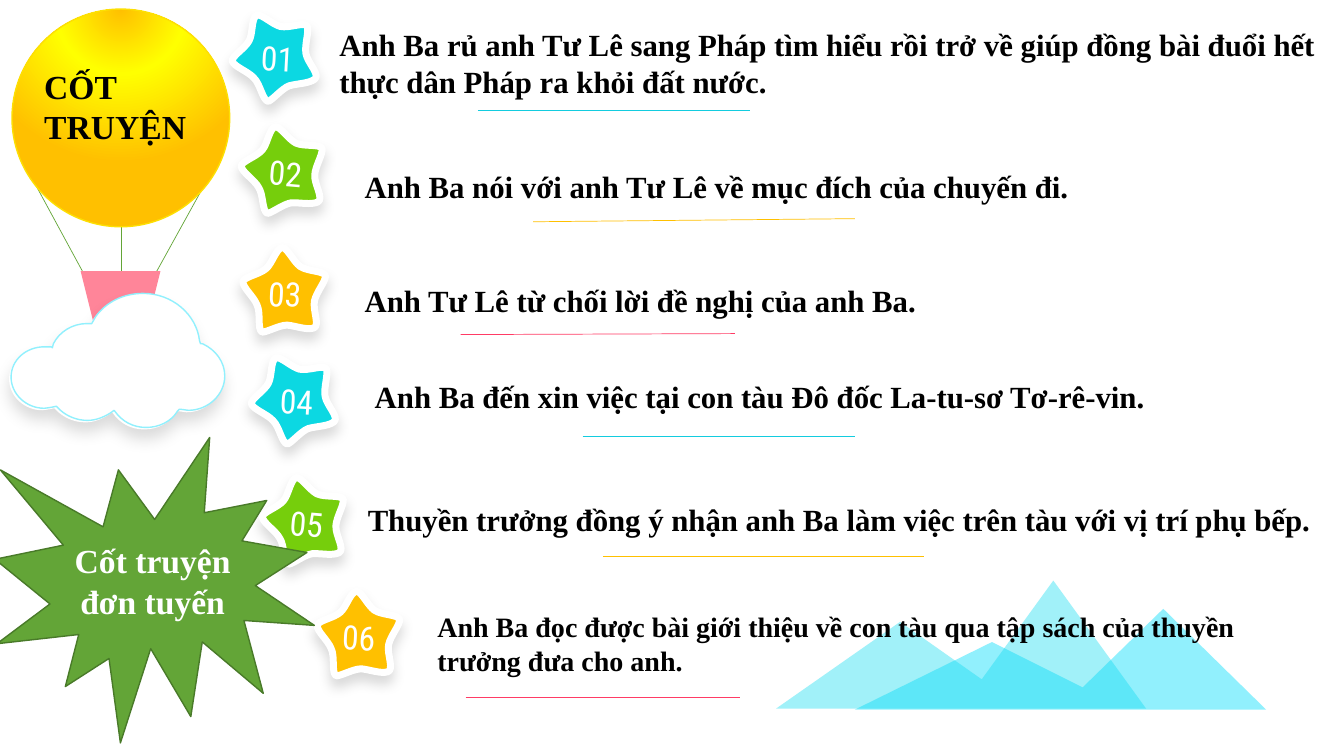
import pptx
import pptx.util
import pptx.oxml
import pptx.oxml.ns
import pptx.dml.color
import pptx.enum.shapes
import pptx.enum.text
import lxml.etree

Pt = pptx.util.Pt
RGB = pptx.dml.color.RGBColor.from_string
SHAPE = pptx.enum.shapes.MSO_SHAPE
ALIGN = pptx.enum.text.PP_ALIGN
ANCHOR = pptx.enum.text.MSO_ANCHOR
qn = pptx.oxml.ns.qn
NS = 'xmlns:a="http://schemas.openxmlformats.org/drawingml/2006/main"'

C = {"cyan": "0CD8E2", "lime": "76CE0C", "gold": "FFC000", "teal": "13CCDF",
     "rose": "FF3B65", "pink": "FF8599", "ice": "91F0FD", "water": "0DDBF1",
     "green": "63A537", "moss": "497A29", "rim": "FDDF03", "yellow": "FFFF00",
     "white": "FFFFFF", "black": "000000"}

HEAD = {"size": Pt(24), "name": "Times New Roman", "bold": True}
BODY = {**HEAD, "size": Pt(22)}
SMALL = {**HEAD, "size": Pt(20)}
DIGIT = {"size": Pt(24), "name": "Roboto Condensed", "bold": False}

# Outlines: a pair is a straight step, six numbers are a curve; unit 0.72 pt
UNIT = Pt(0.72)
STAR = [(82, 28), (80, 23, 65, 24, 57, 19), (50, 14, 44, 0, 39, 0),
        (33, 1, 29, 16, 23, 21), (16, 27, 1, 29, 0, 34),
        (0, 40, 11, 49, 14, 57), (18, 65, 14, 81, 19, 84),
        (24, 84, 36, 77, 44, 77), (53, 78, 63, 82, 70, 80),
        (77, 78, 69, 62, 71, 53), (73, 44, 82, 34, 82, 28)]
CLOUD = [(131, 0), (111, 0, 94, 9, 84, 23), (80, 30), (75, 30),
         (61, 30, 48, 38, 42, 50), (41, 54), (40, 53),
         (38, 53, 36, 53, 33, 53), (15, 53, 0, 66, 0, 83),
         (0, 100, 15, 114, 33, 114), (36, 114, 38, 113, 40, 113),
         (45, 112), (49, 116), (56, 122, 65, 126, 76, 126),
         (85, 126, 94, 122, 101, 117), (102, 116), (103, 117),
         (110, 127, 121, 133, 134, 133), (147, 133, 159, 127, 165, 117),
         (167, 115), (168, 115), (171, 115, 173, 116, 176, 116),
         (196, 116, 212, 100, 212, 82), (212, 68, 203, 56, 190, 50),
         (188, 50), (187, 47), (184, 21, 160, 0, 131, 0)]
BACK_PEAKS = [(306, 0), (408, 100), (0, 100), (136, 33), (226, 78)]
FRONT_PEAKS = [(275, 0), (367, 127), (0, 127), (123, 41), (204, 98)]

# Star styles: fill, star turn, digit turn, digit box offset and width
CYAN = ("cyan", -21.1, 3, -16.2, -14, 64)
LIME = ("lime", -8.3, 4.9, -17.3, -13.7, 64)
GOLD = ("gold", 0, 3, -18.5, -14.8, 57)

# Steps: star style, star centre, text box, underline, its colour, font, text
STEPS = [
    (CYAN, (195.5, 38.5), (235.4, 15.1, 715, 60.5), (341.3, 78.5, 535.7, 78.5), "teal", BODY,
     "Anh Ba rủ anh Tư Lê sang Pháp tìm hiểu rồi trở về giúp đồng bài đuổi hết "
     "thực dân Pháp ra khỏi đất nước."),
    (LIME, (202.3, 120.2), (253.4, 116.6, 563.8, 33.8), (380.9, 158.4, 610.6, 156.2), "gold", BODY,
     "Anh Ba nói với anh Tư Lê về mục đích của chuyến đi."),
    (GOLD, (203, 207), (253.4, 198, 612, 33.8), (329, 239, 524.9, 238.3), "rose", BODY,
     "Anh Tư Lê từ chối lời đề nghị của anh Ba."),
    (CYAN, (209.2, 283.3), (260.6, 266.4, 598.3, 33.8), (416.2, 311.8, 610.6, 311.8), "teal", BODY,
     "Anh Ba đến xin việc tại con tàu Đô đốc La-tu-sơ Tơ-rê-vin."),
    (LIME, (217.4, 370.8), (255.6, 354.2, 694.8, 33.8), (430.6, 397.4, 660.2, 397.4), "gold", BODY,
     "Thuyền trưởng đồng ý nhận anh Ba làm việc trên tàu với vị trí phụ bếp."),
    (GOLD, (256, 452.5), (305.3, 432, 607.7, 55.4), (332.6, 498.2, 528.5, 498.2), "rose", SMALL,
     "Anh Ba đọc được bài giới thiệu về con tàu qua tập sách của thuyền "
     "trưởng đưa cho anh."),
]


def paint(sp, fill, line=None, width=1):
    sp.shadow.inherit = False
    sp.fill.solid()
    sp.fill.fore_color.rgb = RGB(C[fill])
    if line:
        sp.line.color.rgb = RGB(C[line])
        sp.line.width = Pt(width)
    else:
        sp.line.fill.background()


def cast_shadow(sp, blur, dist):
    effects = sp._element.spPr.find(qn("a:effectLst"))
    effects.append(pptx.oxml.parse_xml(
        f'<a:outerShdw {NS} blurRad="{Pt(blur)}" dist="{Pt(dist)}" dir="5400000" '
        f'algn="t" rotWithShape="0"><a:srgbClr val="{C["black"]}">'
        '<a:alpha val="15000"/></a:srgbClr></a:outerShdw>'))


def outline(shapes, steps, x, y):
    """Closed freeform whose six-number steps become Bezier curves."""
    points = [step[i:i + 2] for step in steps for i in range(0, len(step), 2)]
    fb = shapes.build_freeform(*points[0], scale=UNIT)
    fb.add_line_segments(points[1:], close=False)
    sp = fb.convert_to_shape(Pt(x), Pt(y))
    route = next(sp._element.iter(qn("a:path")))
    lines = iter(route.findall(qn("a:lnTo")))
    for step in steps[1:]:
        if len(step) == 6:
            curve = lxml.etree.SubElement(route, qn("a:cubicBezTo"))
            for _ in range(3):
                ln = next(lines)
                curve.append(ln[0])
                route.remove(ln)
        else:
            route.append(next(lines))
    lxml.etree.SubElement(route, qn("a:close"))
    return sp


def write(sp, text, fmt, color):
    tf = sp.text_frame
    tf.word_wrap = True
    p = tf.paragraphs[0]
    r = p.add_run()
    r.text = text
    for key, value in fmt.items():
        setattr(r.font, key, value)
    r.font.color.rgb = RGB(C[color])
    return p


def label(shapes, box, text, fmt, color="black"):
    sp = shapes.add_textbox(*map(Pt, box))
    write(sp, text, fmt, color)
    return sp


def rule(shapes, ends, color):
    ln = shapes.add_connector(pptx.enum.shapes.MSO_CONNECTOR.STRAIGHT, *map(Pt, ends))
    ln.line.color.rgb = RGB(C[color])
    ln.line.width = Pt(0.5)
    lxml.etree.SubElement(ln._element.spPr, qn("a:effectLst"))


def mountains(s, x, y):
    paint(outline(s.shapes, BACK_PEAKS, x + 56.2, y + 20.2), "ice")
    front = outline(s.shapes, FRONT_PEAKS, x, y)
    paint(front, "water")
    tint = front._element.spPr.find(qn("a:solidFill"))[0]
    lxml.etree.SubElement(tint, qn("a:alpha")).set("val", "39000")


def star(s, style, cx, cy, number):
    fill, turn, tilt, dx, dy, width = style
    shapes = s.shapes.add_group_shape().shapes
    sp = outline(shapes, STAR, cx - 29.5, cy - 30.2)
    sp.rotation = turn
    paint(sp, fill, "white", 5)
    cast_shadow(sp, 9, 6)
    label(shapes, (cx + dx, cy + dy, width, 36), number, DIGIT, "white").rotation = tilt


def balloon(s, x, y):
    shapes = s.shapes.add_group_shape().shapes
    # Ropes
    for x1, y1, x2, y2 in [(15.9, 123.8, 52.6, 191.5), (140.4, 120.2, 103, 187.9),
                           (77.8, 155.5, 77.8, 187.2)]:
        rule(shapes, (x + x1, y + y1, x + x2, y + y2), "green")
    # Envelope with a glow from the top
    ball = shapes.add_shape(SHAPE.OVAL, Pt(x), Pt(y), Pt(155.5), Pt(155.5))
    paint(ball, "gold", "rim")
    stops = "".join(f'<a:gs pos="{pos}000"><a:srgbClr val="{C[name]}"/></a:gs>'
                    for pos, name in [(0, "gold"), (42, "yellow"), (100, "gold")])
    spPr = ball._element.spPr
    spPr.replace(spPr.find(qn("a:solidFill")), pptx.oxml.parse_xml(
        f'<a:gradFill {NS} rotWithShape="1"><a:gsLst>{stops}</a:gsLst><a:path path="circle">'
        '<a:fillToRect l="50000" t="-80000" r="50000" b="180000"/></a:path></a:gradFill>'))
    # Basket
    basket = shapes.add_shape(SHAPE.TRAPEZOID, Pt(x + 49), Pt(y + 187.2), Pt(57), Pt(36))
    basket.rotation = 180
    paint(basket, "pink")
    label(shapes, (x + 15.9, y + 36.7, 118.8, 65.5), "CỐT TRUYỆN", HEAD)


def cloud(s, x, y):
    shapes = s.shapes.add_group_shape().shapes
    base = outline(shapes, CLOUD, x, y)
    paint(base, "white")
    cast_shadow(base, 12, 7)
    paint(outline(shapes, CLOUD, x + 1.4, y - 1.4), "white", "ice")


def burst(s, x, y, w, h):
    sp = s.shapes.add_shape(SHAPE.EXPLOSION1, Pt(x), Pt(y), Pt(w), Pt(h))
    paint(sp, "green", "moss")
    sp.text_frame.vertical_anchor = ANCHOR.MIDDLE
    write(sp, "Cốt truyện đơn tuyến", HEAD, "white").alignment = ALIGN.CENTER


def main():
    prs = pptx.Presentation()
    prs.slide_width, prs.slide_height = Pt(960), Pt(540)
    s = prs.slides.add_slide(prs.slide_layouts[6])
    mountains(s, 554.4, 414.7)
    for n, (style, centre, box, ends, color, fmt, text) in enumerate(STEPS, 1):
        rule(s.shapes, ends, color)
        star(s, style, *centre, f"{n:02}")
        label(s.shapes, box, text, fmt)
    balloon(s, 8.6, 6.5)
    cloud(s, 6.5, 211)
    burst(s, -3.6, 312.5, 228.2, 218.2)
    prs.save("out.pptx")


if __name__ == "__main__":
    main()
